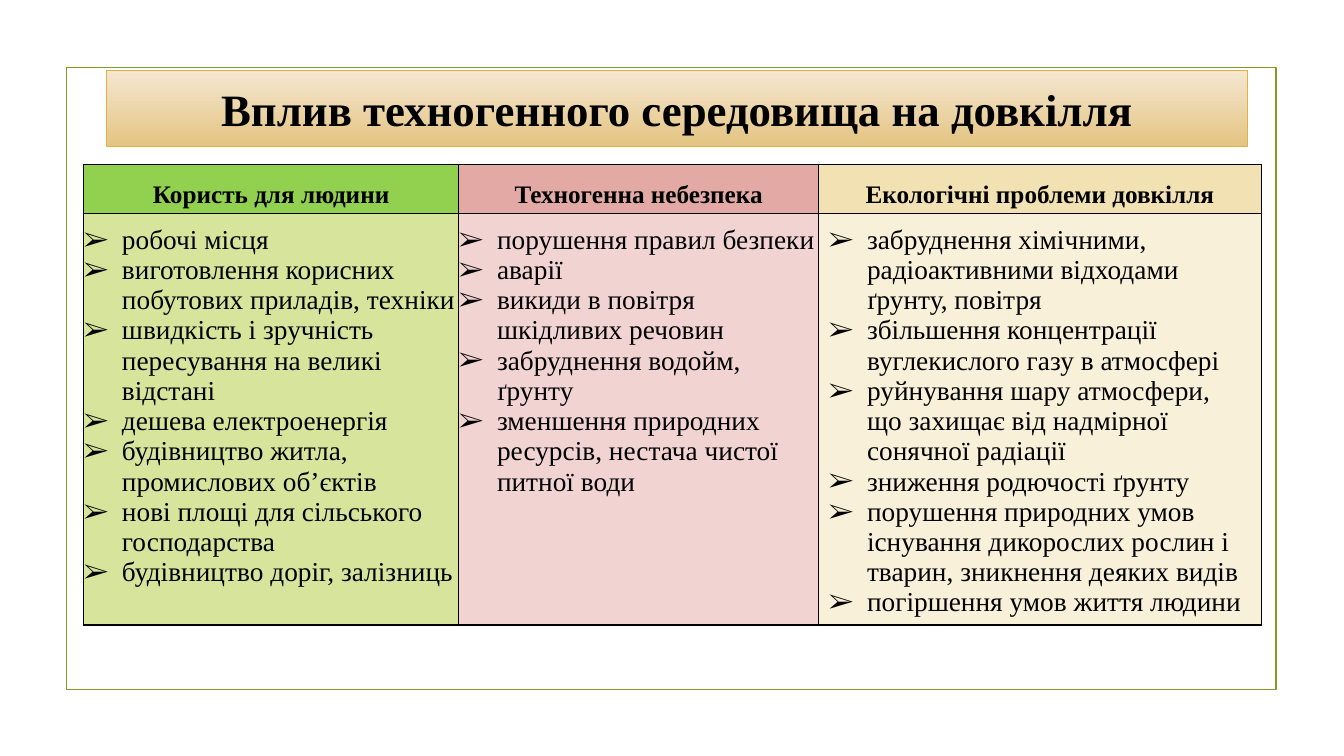
from lxml import etree
from pptx import Presentation
from pptx.dml.color import RGBColor
from pptx.enum import shapes, text
from pptx.oxml.ns import qn
from pptx.util import Emu, Inches, Pt

TITLE = "Вплив техногенного середовища на довкілля"
NO_MARGINS = (0, 0.11, 0, 0)
# heading, heading fill, body fill, width, body margins (left, top, right, bottom), items
COLUMNS = [
    ("Користь для людини", "green", "pale_green", 3.72, NO_MARGINS, [
        "робочі місця",
        "виготовлення корисних побутових приладів, техніки",
        "швидкість і зручність пересування на великі відстані",
        "дешева електроенергія",
        "будівництво житла, промислових об’єктів",
        "нові площі для сільського господарства",
        "будівництво доріг, залізниць",
    ]),
    ("Техногенна небезпека", "rose", "pale_rose", 3.57, NO_MARGINS, [
        "порушення правил безпеки",
        "аварії",
        "викиди в повітря шкідливих речовин",
        "забруднення водойм, ґрунту",
        "зменшення природних ресурсів, нестача чистої питної води",
    ]),
    ("Екологічні проблеми довкілля", "sand", "pale_sand", 4.39, (0.1, 0.11, 0.1, 0.05), [
        "забруднення хімічними, радіоактивними відходами ґрунту, повітря",
        "збільшення концентрації вуглекислого газу в атмосфері",
        "руйнування шару атмосфери, що захищає від надмірної сонячної радіації",
        "зниження родючості ґрунту",
        "порушення природних умов існування дикорослих рослин і тварин, зникнення деяких видів",
        "погіршення умов життя людини",
    ]),
]
COLORS = {
    "black": "000000", "frame": "83992A", "title_line": "DEB340",
    "title_top": "F4E7D1", "title_bottom": "E4C482",
    "green": "92D050", "rose": "E3AAA5", "sand": "F2E1B3",
    "pale_green": "D6E49C", "pale_rose": "F1D4D2", "pale_sand": "F8F0D9",
}
FONT = "Times New Roman"
ROW_HEIGHTS = (0.49, 4.08)
INDENT = Inches(0.38)


def rgb(name):
    return RGBColor.from_string(COLORS[name])


def format_runs(paragraph, size, bold):
    for run in paragraph.runs:
        run.font.name = FONT
        run.font.size = Pt(size)
        run.font.bold = bold
        run.font.color.rgb = rgb("black")


def add_bullet(paragraph):
    props = paragraph._p.get_or_add_pPr()
    props.set("marL", str(INDENT))
    props.set("indent", str(-INDENT))
    etree.SubElement(props, qn("a:buFont")).set("typeface", FONT)
    etree.SubElement(props, qn("a:buChar")).set("char", "➢")


def format_cell(cell, fill, margins):
    props = cell._tc.get_or_add_tcPr()
    for side in ("lnL", "lnR", "lnT", "lnB"):
        border = etree.SubElement(props, qn(f"a:{side}"), w=str(Pt(1)))
        solid = etree.SubElement(border, qn("a:solidFill"))
        etree.SubElement(solid, qn("a:srgbClr"), val=COLORS["black"])
    cell.fill.solid()
    cell.fill.fore_color.rgb = rgb(fill)
    (cell.margin_left, cell.margin_top,
     cell.margin_right, cell.margin_bottom) = map(Inches, margins)


prs = Presentation()
prs.slide_width, prs.slide_height = Inches(13.33), Inches(7.5)
slide = prs.slides.add_slide(prs.slide_layouts[5])

# Title band
title = slide.shapes.title
title.left, title.top, title.width, title.height = map(Inches, (1.06, 0.7, 11.31, 0.75))
title.fill.gradient()
title.fill.gradient_angle = 270
for stop, color, position in zip(title.fill.gradient_stops, ("title_top", "title_bottom"), (0, 1)):
    stop.color.rgb = rgb(color)
    stop.position = position
title.line.color.rgb = rgb("title_line")
title.line.width = Pt(0.75)
title.text_frame.text = TITLE
title.text_frame.vertical_anchor = text.MSO_ANCHOR.MIDDLE
title.text_frame.paragraphs[0].alignment = text.PP_ALIGN.CENTER
format_runs(title.text_frame.paragraphs[0], 32, True)

# Frame, behind the title
frame = slide.shapes.add_shape(
    shapes.MSO_SHAPE.RECTANGLE, *map(Inches, (0.66, 0.67, 12, 6.17)))
frame.shadow.inherit = False
frame.fill.background()
frame.line.color.rgb = rgb("frame")
frame.line.width = Pt(1.25)
title._element.addprevious(frame._element)

# Table
widths = [Inches(column[3]) for column in COLUMNS]
heights = [Inches(height) for height in ROW_HEIGHTS]
effects = slide.shapes.add_table(
    len(heights), len(widths), Inches(0.83), Inches(1.63),
    Emu(sum(widths)), Emu(sum(heights))).table
for row, height in zip(effects.rows, heights):
    row.height = height

for index, (heading, head_fill, body_fill, _, margins, items) in enumerate(COLUMNS):
    effects.columns[index].width = widths[index]

    head = effects.cell(0, index)
    format_cell(head, head_fill, NO_MARGINS)
    head.vertical_anchor = text.MSO_ANCHOR.MIDDLE
    head.text_frame.text = heading
    head.text_frame.paragraphs[0].alignment = text.PP_ALIGN.CENTER
    format_runs(head.text_frame.paragraphs[0], 18, True)

    body = effects.cell(1, index)
    format_cell(body, body_fill, margins)
    body.text_frame.text = "\n".join(items)
    for paragraph in body.text_frame.paragraphs:
        add_bullet(paragraph)
        format_runs(paragraph, 19.5, False)

prs.save("out.pptx")
